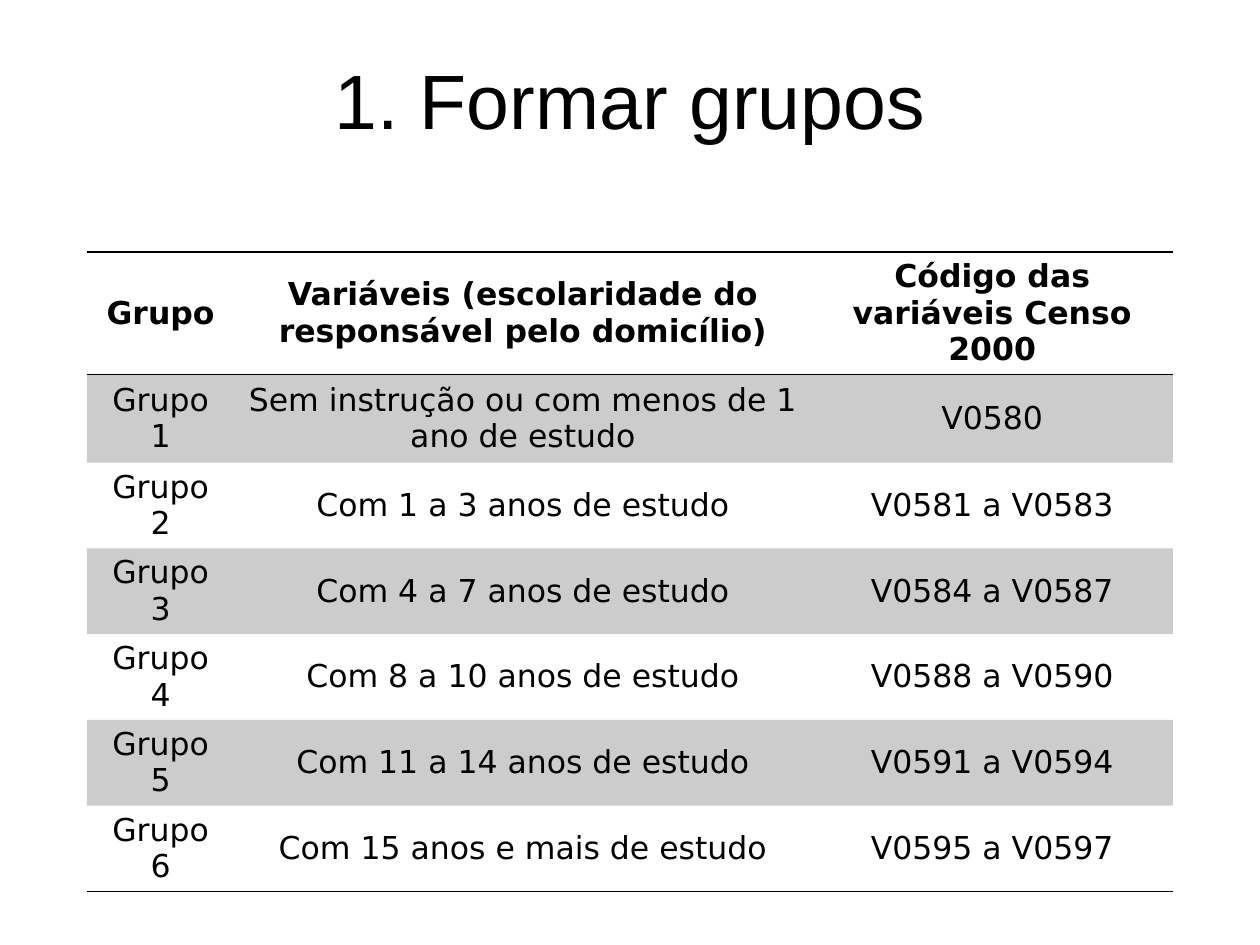
from dataclasses import dataclass

from lxml import etree
from pptx import Presentation
from pptx import util as u
from pptx.dml import color
from pptx.enum import text
from pptx.oxml import ns

BLACK = "000000"
NO_GRID_STYLE = "{2D5ABB26-0587-4C30-8999-92F81FD0307C}"


@dataclass
class Row:
    grupo: str
    variaveis: str
    codigo: str
    height: float = 0.59
    bold: bool = False
    shaded: bool = False
    borders: tuple[str, ...] = ()


ROWS = [
    Row("Grupo", "Variáveis (escolaridade do responsável pelo domicílio)",
        "Código das variáveis Censo 2000", 0.7, bold=True, borders=("lnT", "lnB")),
    Row("Grupo 1", "Sem instrução ou com menos de 1 ano de estudo", "V0580", 0.7, shaded=True),
    Row("Grupo 2", "Com 1 a 3 anos de estudo", "V0581 a V0583"),
    Row("Grupo 3", "Com 4 a 7 anos de estudo", "V0584 a V0587", shaded=True),
    Row("Grupo 4", "Com 8 a 10 anos de estudo", "V0588 a V0590"),
    Row("Grupo 5", "Com 11 a 14 anos de estudo", "V0591 a V0594", shaded=True),
    Row("Grupo 6", "Com 15 anos e mais de estudo", "V0595 a V0597", borders=("lnB",)),
]
COL_WIDTHS = (1.17, 4.58, 2.87)


def rgb(value: str) -> color.RGBColor:
    return color.RGBColor.from_string(value)


def write(tf, content: str, *, font: str, size: float, bold: bool = False,
          fill: str = BLACK) -> None:
    p = tf.paragraphs[0]
    p.alignment = text.PP_ALIGN.CENTER
    r = p.add_run()
    r.text = content
    r.font.name = font
    r.font.size = u.Pt(size)
    r.font.bold = bold
    r.font.color.rgb = rgb(fill)


def add_border(cell, side: str, *, width: float = 1, fill: str = BLACK) -> None:
    tc_pr = cell._tc.get_or_add_tcPr()
    ln = etree.SubElement(tc_pr, ns.qn(f"a:{side}"), w=str(u.Pt(width)))
    solid = etree.SubElement(ln, ns.qn("a:solidFill"))
    etree.SubElement(solid, ns.qn("a:srgbClr"), val=fill)


def shade(cell, *, fill: str = BLACK, opacity: int = 20) -> None:
    cell.fill.solid()
    cell.fill.fore_color.rgb = rgb(fill)
    clr = cell._tc.tcPr.find(".//" + ns.qn("a:solidFill") + "/" + ns.qn("a:srgbClr"))
    etree.SubElement(clr, ns.qn("a:alpha"), val=str(opacity * 1000))


def draw_cell(cell, content: str, row: Row) -> None:
    cell.vertical_anchor = text.MSO_ANCHOR.MIDDLE
    write(cell.text_frame, content, font="DejaVu Sans", size=18, bold=row.bold)
    for side in row.borders:
        add_border(cell, side)
    if row.shaded:
        shade(cell)
    else:
        cell.fill.background()


def draw_table(s, rows: list[Row], left: float, top: float) -> None:
    frame = s.shapes.add_table(
        len(rows), len(COL_WIDTHS), u.Inches(left), u.Inches(top),
        u.Inches(sum(COL_WIDTHS)), u.Inches(sum(row.height for row in rows)))
    table = frame.table
    table.first_row = table.horz_banding = False
    table._tbl.tblPr.find(ns.qn("a:tableStyleId")).text = NO_GRID_STYLE
    for column, width in zip(table.columns, COL_WIDTHS):
        column.width = u.Inches(width)
    for i, row in enumerate(rows):
        table.rows[i].height = u.Inches(row.height)
        for j, content in enumerate((row.grupo, row.variaveis, row.codigo)):
            draw_cell(table.cell(i, j), content, row)


def draw_title(s, content: str) -> None:
    sp = s.shapes.title
    sp.left, sp.top = u.Inches(0.5), u.Inches(0.3)
    sp.width, sp.height = u.Inches(9), u.Inches(1.25)
    tf = sp.text_frame
    tf.vertical_anchor = text.MSO_ANCHOR.TOP
    tf.margin_top = u.Inches(0.12)
    write(tf, content, font="Arial", size=44)


def main() -> None:
    prs = Presentation()
    prs.slide_width, prs.slide_height = u.Inches(10), u.Inches(7.5)
    s = prs.slides.add_slide(prs.slide_layouts[5])
    draw_title(s, "1. Formar grupos")
    draw_table(s, ROWS, 0.69, 2)
    prs.save("out.pptx")


if __name__ == "__main__":
    main()
